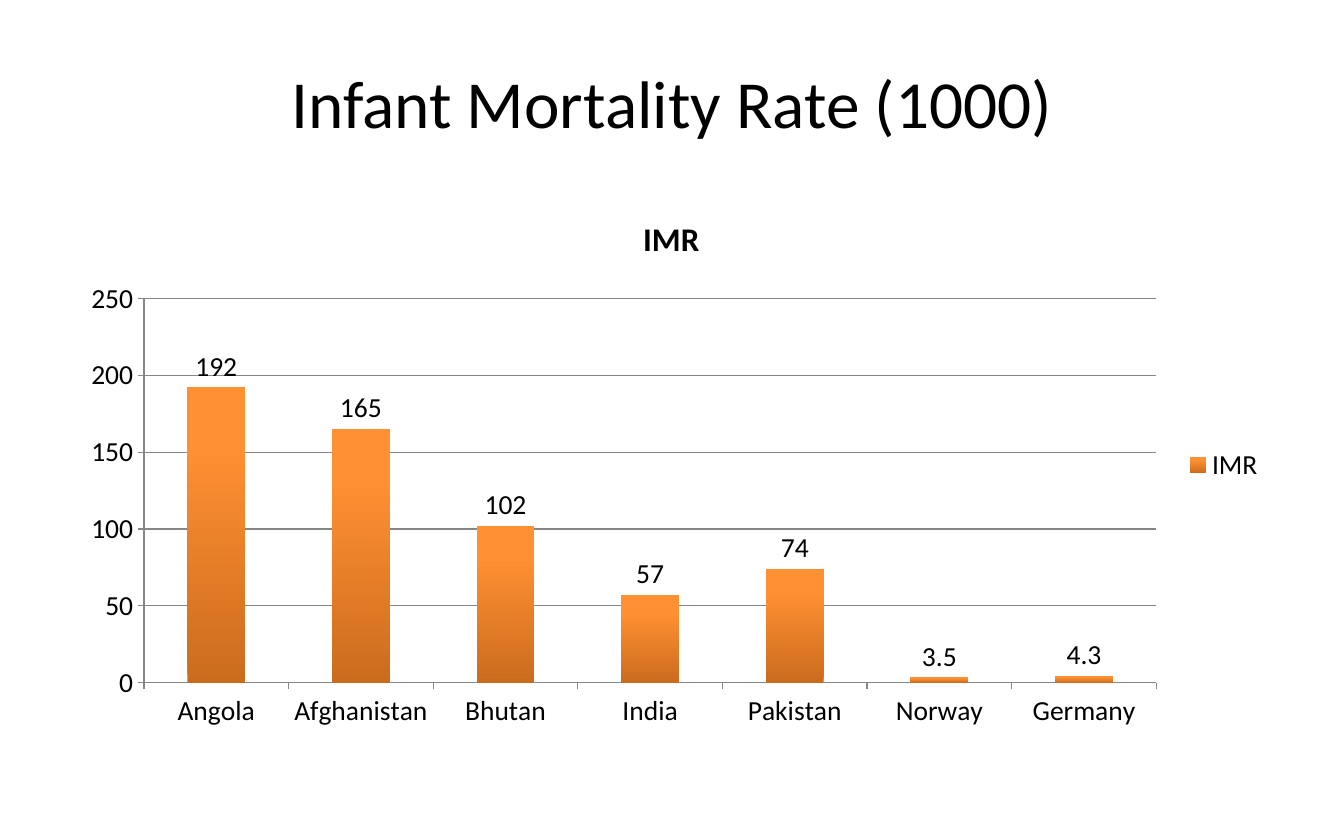
from pptx import Presentation
from pptx import util as u
from pptx.chart.data import CategoryChartData
from pptx.dml.color import RGBColor
from pptx.enum import chart as ch, text

COLORS = {"text": "000000", "axis": "868686", "bar_bottom": "CB6C1D", "bar_top": "FF9033"}
COLORS = {name: RGBColor.from_string(value) for name, value in COLORS.items()}
FONT = "Calibri"
RATES = {"Angola": 192, "Afghanistan": 165, "Bhutan": 102, "India": 57,
         "Pakistan": 74, "Norway": 3.5, "Germany": 4.3}


def style_font(font, size, bold=False):
    font.name = FONT
    font.size = u.Pt(size)
    font.bold = bold
    font.color.rgb = COLORS["text"]


deck = Presentation()
deck.slide_width, deck.slide_height = u.Inches(12.21), u.Inches(7.5)
page = deck.slides.add_slide(deck.slide_layouts[6])

# Slide title
title_box = page.shapes.add_textbox(u.Inches(0.61), u.Inches(0.3), u.Inches(10.99), u.Inches(1.25))
frame = title_box.text_frame
frame.word_wrap = True
frame.vertical_anchor = text.MSO_ANCHOR.MIDDLE
frame.text = "Infant Mortality Rate (1000)"
para = frame.paragraphs[0]
para.alignment = text.PP_ALIGN.CENTER
style_font(para.runs[0].font, 44)

# Column chart
data = CategoryChartData()
data.categories = list(RATES)
data.add_series("IMR", list(RATES.values()))
chart = page.shapes.add_chart(ch.XL_CHART_TYPE.COLUMN_CLUSTERED, u.Inches(0.61), u.Inches(1.75),
                              u.Inches(10.98), u.Inches(4.95), data).chart
style_font(chart.font, 18)

# Chart title and legend
chart.has_title = True
chart.chart_title.include_in_layout = False
chart_heading = chart.chart_title.text_frame
chart_heading.text = "IMR"
style_font(chart_heading.paragraphs[0].runs[0].font, 21.6, bold=True)
chart.has_legend = True
chart.legend.position = ch.XL_LEGEND_POSITION.RIGHT
chart.legend.include_in_layout = False

# Axes and gridlines
value_axis = chart.value_axis
value_axis.minimum_scale, value_axis.maximum_scale, value_axis.major_unit = 0, 250, 50
value_axis.has_major_gridlines = True
for axis in (chart.category_axis, value_axis):
    axis.major_tick_mark = ch.XL_TICK_MARK.OUTSIDE
for line in (chart.category_axis.format.line, value_axis.format.line,
             value_axis.major_gridlines.format.line):
    line.color.rgb = COLORS["axis"]
    line.width = u.Pt(0.75)

# Gradient bars with values above
plot = chart.plots[0]
plot.gap_width = 150
plot.vary_by_categories = False
bars = plot.series[0]
bars.invert_if_negative = False
fill = bars.format.fill
fill.gradient()
fill.gradient_angle = 90
for stop, color, position in zip(fill.gradient_stops, ("bar_bottom", "bar_top"), (0, 0.8)):
    stop.color.rgb = COLORS[color]
    stop.position = position
labels = bars.data_labels
labels.show_value = True
labels.position = ch.XL_LABEL_POSITION.OUTSIDE_END
style_font(labels.font, 18)

deck.save("out.pptx")
